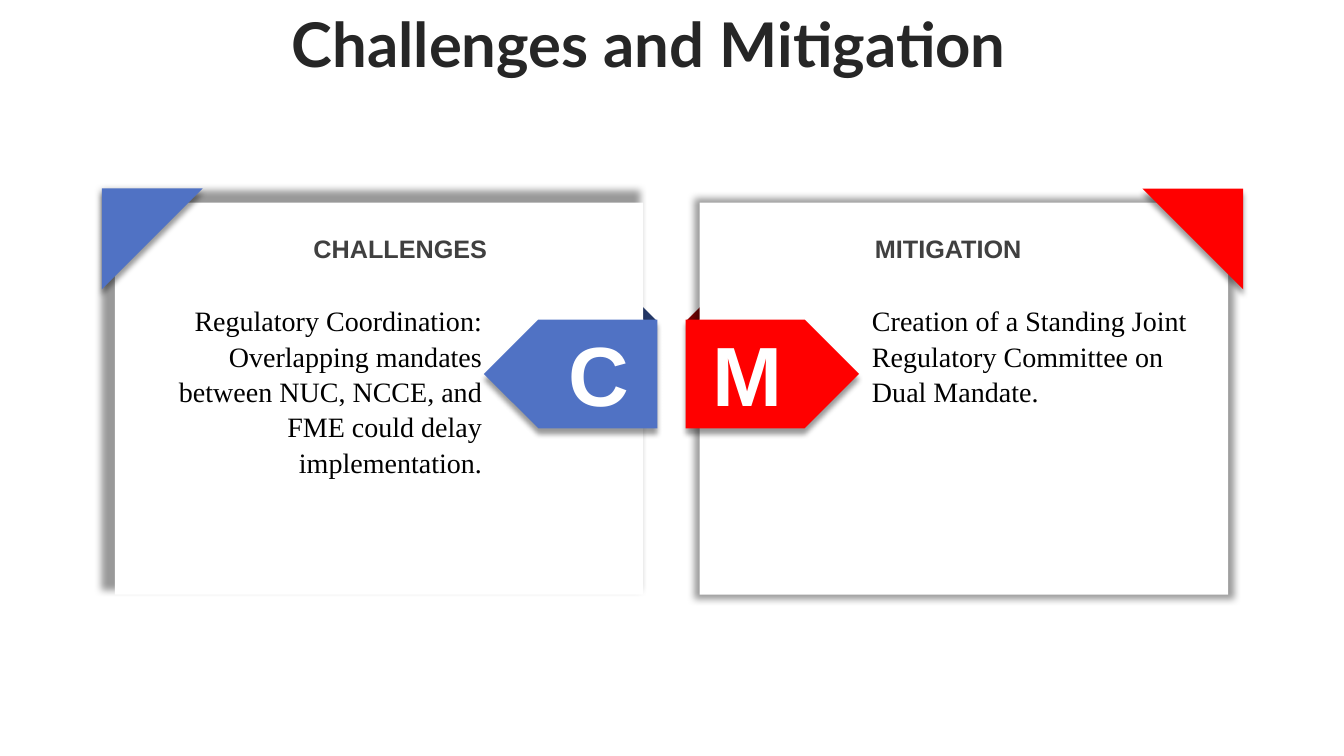
from lxml.etree import SubElement
from pptx import Presentation
from pptx.dml.color import RGBColor
from pptx.enum.shapes import MSO_SHAPE as Shape
from pptx.enum.text import MSO_ANCHOR as Anchor, PP_ALIGN as Align
from pptx.oxml.ns import qn
from pptx.util import Inches, Pt

WHITE = RGBColor(0xFF, 0xFF, 0xFF)
BLACK = RGBColor(0, 0, 0)
INK = RGBColor(0x26, 0x26, 0x26)
GRAY = RGBColor(0x40, 0x40, 0x40)
BLUE = RGBColor(0x50, 0x72, 0xC4)
NAVY = RGBColor(0x23, 0x37, 0x67)
RED = RGBColor(0xFF, 0, 0)
MAROON = RGBColor(0x80, 0, 0)


class SlideBuilder:
    """Draw styled elements on the current slide."""

    styles = {
        "title": dict(name="Lato", size=Pt(44), bold=True),
        "letter": dict(name="Arial", size=Pt(60), bold=True),
        "heading": dict(name="Arial", size=Pt(18), bold=True),
        "body": dict(name="Times New Roman", size=Pt(20), bold=False),
    }
    shadows = {
        "soft": dict(blurRad=Pt(4), dist=Pt(4), dir=5400000),
        "halo": dict(blurRad=Pt(5), dist=0, dir=0, sx=102000, sy=102000),
        "offset": dict(blurRad=Pt(5), dist=Pt(8.7), dir=13500000,
                       sx=102000, sy=102000),
    }

    def __init__(self, page):
        self.page = page

    def finish(self, shape, color, shadow):
        shape.fill.solid()
        shape.fill.fore_color.rgb = color
        shape.line.fill.background()
        shape.shadow.inherit = False
        effects = shape._element.spPr.find(qn("a:effectLst"))
        outer = SubElement(effects, qn("a:outerShdw"))
        for key, value in self.shadows[shadow].items():
            outer.set(key, str(int(value)))
        outer.set("algn", "ctr")
        outer.set("rotWithShape", "0")
        tint = SubElement(outer, qn("a:srgbClr"), val="000000")
        SubElement(tint, qn("a:alpha"), val="40000")

    def shape(self, kind, place, color, shadow="soft", rotation=0):
        shape = self.page.shapes.add_shape(kind, *map(Inches, place))
        shape.rotation = rotation
        self.finish(shape, color, shadow)

    def fold(self, points, color):
        start, *rest = [(Inches(x), Inches(y)) for x, y in points]
        outline = self.page.shapes.build_freeform(*start)
        outline.add_line_segments(rest)
        self.finish(outline.convert_to_shape(), color, "soft")

    def text(self, place, lines, style, color, align, spacing=1.0, anchor=Anchor.TOP):
        box = self.page.shapes.add_textbox(*map(Inches, place))
        frame = box.text_frame
        frame.word_wrap = True
        frame.vertical_anchor = anchor
        for index, line in enumerate(lines):
            para = frame.add_paragraph() if index else frame.paragraphs[0]
            para.alignment = align
            para.line_spacing = spacing
            span = para.add_run()
            span.text = line
            for key, value in self.styles[style].items():
                setattr(span.font, key, value)
            span.font.color.rgb = color


def main():
    deck = Presentation()
    deck.slide_width, deck.slide_height = Inches(13.33), Inches(7.5)
    page = deck.slides.add_slide(deck.slide_layouts[6])
    draw = SlideBuilder(page)

    draw.text((0.11, 0.08, 12.66, 0.79), ["Challenges and Mitigation"],
              "title", INK, Align.CENTER, 0.9, Anchor.MIDDLE)

    panels = [
        dict(card=1.14, shadow="offset", tag=4.8, turn=180, corner=(1.01, 90),
             fold=(6.34, 6.51), colors=(BLUE, NAVY), letter=("C", 5.49),
             heading=("CHALLENGES", 1.96, 2.97), body=(1.31, 3.57),
             align=Align.RIGHT,
             lines=["Regulatory Coordination:",
                    "Overlapping mandates between NUC, NCCE, and FME "
                    "could delay implementation."]),
        dict(card=6.94, shadow="halo", tag=6.8, turn=0, corner=(11.33, 180),
             fold=(6.98, 6.81), colors=(RED, MAROON), letter=("M", 6.97),
             heading=("MITIGATION", 8.58, 3.57), body=(8.55, 3.58),
             align=Align.LEFT,
             lines=["Creation of a Standing Joint Regulatory Committee "
                    "on Dual Mandate."]),
    ]
    for panel in panels:
        color, dark = panel["colors"]
        inner, outer = panel["fold"]
        draw.fold([(inner, 3.17), (outer, 3.18), (inner, 3.01)], dark)
        draw.shape(Shape.RECTANGLE, (panel["card"], 2.01, 5.24, 3.89),
                   WHITE, panel["shadow"])
        draw.shape(Shape.PENTAGON, (panel["tag"], 3.17, 1.72, 1.08),
                   color, rotation=panel["turn"])
        letter, left = panel["letter"]
        draw.text((left, 3.15, 0.89, 1.11), [letter], "letter", WHITE, Align.CENTER)
        heading, left, width = panel["heading"]
        draw.text((left, 2.27, width, 0.4), [heading], "heading", GRAY, panel["align"])
        left, width = panel["body"]
        draw.text((left, 2.95, width, 1.8), panel["lines"], "body", BLACK,
                  panel["align"], 1.05)
        left, turn = panel["corner"]
        draw.shape(Shape.RIGHT_TRIANGLE, (left, 1.87, 1, 1), color, rotation=turn)

    deck.save("out.pptx")


if __name__ == "__main__":
    main()
